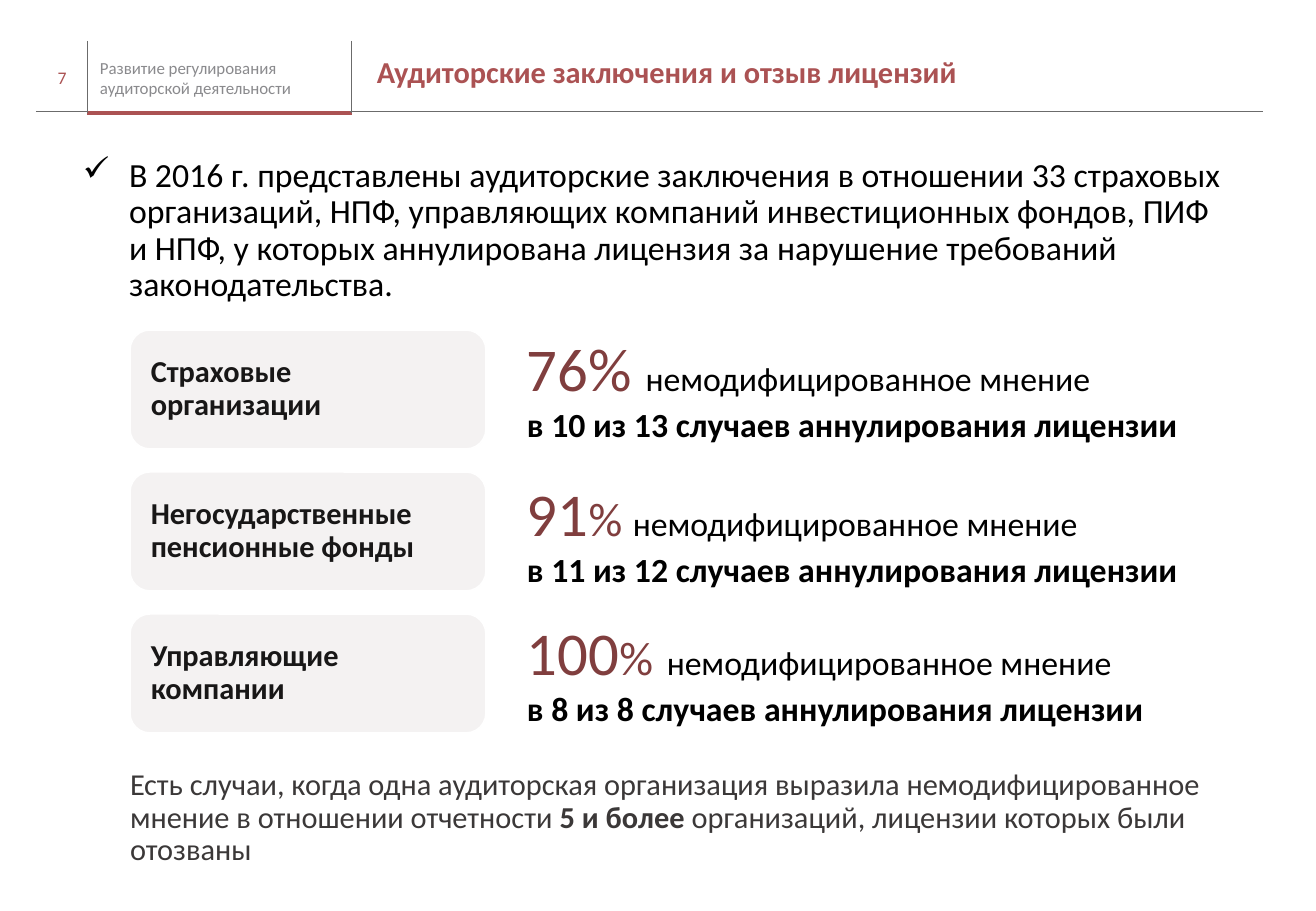
from dataclasses import dataclass
from lxml.etree import SubElement as Sub
from pptx import Presentation
from pptx.dml.color import RGBColor as RGB
from pptx.enum.shapes import MSO_CONNECTOR as CON, MSO_SHAPE as SHAPE
from pptx.enum.text import MSO_ANCHOR as ANCHOR, PP_ALIGN as ALIGN
from pptx.oxml.ns import qn
from pptx.util import Emu, Pt


@dataclass(frozen=True)
class Theme:
    font: str = "Calibri"
    red: str = "AB5253"
    wine: str = "803E3E"
    rule: str = "6B6B6B"
    pale: str = "8A8A8D"
    card: str = "F4F2F2"
    white: str = "FFFFFF"
    ink: str = "181717"
    soft: str = "3B3838"
    black: str = "000000"
    tiny: float = 10
    num: float = 10.5
    mid: float = 18
    body: float = 20
    sign: float = 28
    big: float = 36


T = Theme()

# Content
PAGE = "7"
TOPIC = "Развитие регулирования аудиторской деятельности"
TITLE = "Аудиторские заключения и отзыв лицензий"
LEAD = ("В 2016 г. представлены аудиторские заключения в отношении 33 страховых "
        "организаций, НПФ, управляющих компаний инвестиционных фондов, ПИФ \n"
        "и НПФ, у которых аннулирована лицензия за нарушение требований "
        "законодательства.")
VIEW = "немодифицированное мнение"
# Card label, figure runs with sizes, cases, top of figure text
ROWS = [
    ("Страховые \nорганизации", [("76% ", T.big)],
     "в 10 из 13 случаев аннулирования лицензии", 326),
    ("Негосударственные пенсионные фонды", [("91", T.big), ("% ", T.sign)],
     "в 11 из 12 случаев аннулирования лицензии", 471),
    ("Управляющие \nкомпании", [("100", T.big), ("%", T.sign), (" ", T.big)],
     "в 8 из 8 случаев аннулирования лицензии", 610),
]
NOTE = [
    ("Есть случаи, когда одна аудиторская организация выразила "
     "немодифицированное мнение в отношении отчетности ", False),
    ("5 и более ", True),
    ("организаций, лицензии которых были отозваны", False),
]
# Header rules: x1, y1, x2, y2, colour, points
RULES = [
    (36, 111, 87, 111, T.rule, 0.25),
    (87, 113, 352, 113, T.red, 2.25),
    (350, 111, 1263, 111, T.rule, 0.25),
    (87, 41, 87, 113, T.rule, 0.25),
    (351, 41, 351, 113, T.rule, 0.25),
]
LEFT, TOP, STEP = 130, 330, 142
CARD_W, CARD_H = 356, 119


def px(n):
    return Emu(round(n * 914400 / 121.5))


def frame(shape, pad=(0, 0, 0, 0), anchor=ANCHOR.TOP):
    tf = shape.text_frame
    tf.word_wrap = True
    tf.vertical_anchor = anchor
    tf.margin_left, tf.margin_top, tf.margin_right, tf.margin_bottom = map(px, pad)
    return tf


def box(x, y, w, h, pad=(0, 0, 0, 0), anchor=ANCHOR.TOP):
    return frame(slide.shapes.add_textbox(px(x), px(y), px(w), px(h)), pad, anchor)


def write(para, text, size, tint, bold=False):
    for i, part in enumerate(text.split("\n")):
        if i:
            para.add_line_break()
        run = para.add_run()
        run.text = part
        font = run.font
        font.name, font.size, font.bold = T.font, Pt(size), bold
        font.color.rgb = RGB.from_string(tint)


deck = Presentation()
deck.slide_width, deck.slide_height = px(1316), px(911)
slide = deck.slides.add_slide(deck.slide_layouts[6])

# Header rules
for x1, y1, x2, y2, tint, width in RULES:
    rule = slide.shapes.add_connector(CON.STRAIGHT, px(x1), px(y1), px(x2), px(y2))
    rule.line.color.rgb = RGB.from_string(tint)
    rule.line.width = Pt(width)
    Sub(rule._element.spPr, qn("a:effectLst"))

# Header text
para = box(36, 53, 52, 49, anchor=ANCHOR.MIDDLE).paragraphs[0]
para.alignment = ALIGN.CENTER
write(para, PAGE, T.num, T.red)
para = box(100, 57, 247, 42, anchor=ANCHOR.MIDDLE).paragraphs[0]
write(para, TOPIC, T.tiny, T.pale)
para = box(365, 36, 671, 75, (12, 6, 12, 6), ANCHOR.MIDDLE).paragraphs[0]
para.line_spacing = 0.9
write(para, TITLE, T.mid, T.red, True)

# Lead with check mark
para = box(83, 158, 1163, 151).paragraphs[0]
para.line_spacing = 0.9
props = para._p.get_or_add_pPr()
props.set("marL", str(px(46)))
props.set("indent", str(-px(46)))
Sub(props, qn("a:buChar")).set("char", "✓")
write(para, LEAD, T.body, T.black)

# Cards and figures
for i, (label, figure, cases, y) in enumerate(ROWS):
    card = slide.shapes.add_shape(SHAPE.ROUNDED_RECTANGLE, px(LEFT),
                                  px(TOP + i * STEP), px(CARD_W), px(CARD_H))
    card.shadow.inherit = False
    card.fill.solid()
    card.fill.fore_color.rgb = RGB.from_string(T.card)
    card.line.color.rgb = RGB.from_string(T.white)
    card.line.width = Pt(1)
    para = frame(card, (15, 15, 15, 15), ANCHOR.MIDDLE).paragraphs[0]
    para.alignment = ALIGN.LEFT
    para.line_spacing = 0.9
    write(para, label, T.mid, T.ink, True)

    tf = box(508, y, 760, 130, (19, 5, 15, 10))
    for text, size in figure:
        write(tf.paragraphs[0], text, size, T.wine)
    write(tf.paragraphs[0], VIEW, T.body, T.black)
    write(tf.add_paragraph(), cases, T.body, T.black, True)

# Closing note
para = box(LEFT, 769, 1108, 96).paragraphs[0]
para.line_spacing = 0.9
for text, bold in NOTE:
    write(para, text, T.mid, T.soft, bold)

deck.save("out.pptx")
